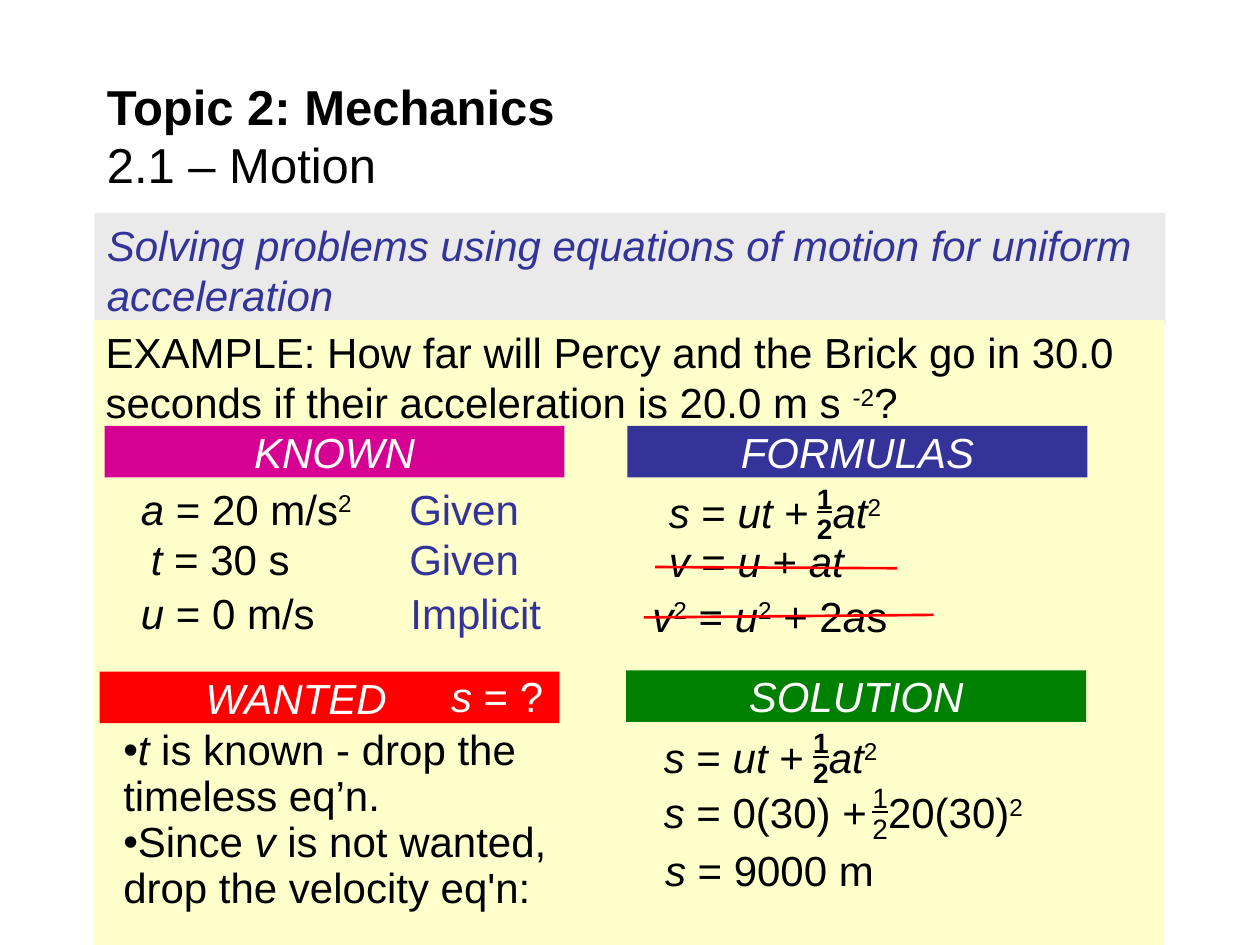
"""Build a physics slide that solves a uniform acceleration problem."""
from lxml import etree
from pptx import Presentation
from pptx.dml.color import RGBColor
from pptx.enum import shapes, text
from pptx.oxml.ns import qn
from pptx.util import Inches, Pt

THEME = {
    "font": "Arial", "title": 28, "body": 24, "fraction": 16,
    "black": "000000", "white": "FFFFFF", "blue": "333399", "grey": "EAEAEA",
    "cream": "FFFFCC", "magenta": "D60093", "red": "FF0000", "green": "008000",
}
ALIGN = {"l": text.PP_ALIGN.LEFT, "c": text.PP_ALIGN.CENTER, "r": text.PP_ALIGN.RIGHT}

TITLE = [[("Topic 2: Mechanics", "b")], [("2.1 – Motion", "")]]
TOPIC = [("Solving problems using equations of motion for uniform acceleration", "i")]
EXAMPLE = [
    ("EXAMPLE: How far will Percy and the Brick go in 30.0 seconds "
     "if their acceleration is 20.0 m s ", ""), ("-2", "^"), ("?", "")]

HEADERS = [
    ("KNOWN", 0.83, 3.38, "magenta", {"align": "c"}),
    ("FORMULAS", 4.98, 3.38, "blue", {"align": "c"}),
    ("WANTED", 0.79, 5.33, "red", {"inset": 0.84}),
    ("SOLUTION", 4.97, 5.32, "green", {"align": "c"}),
]
KNOWN = [
    (1.02, 3.83, [("a", "i"), (" = 20 m/s", ""), ("2", "^")], 3.15, "Given"),
    (1.1, 4.23, [("t", "i"), (" = 30 s", "")], 3.15, "Given"),
    (1.02, 4.66, [("u", "i"), (" = 0 m/s", "")], 3.16, "Implicit"),
]
WANTED = [("s", "i"), (" = ?", "")]
NOTES = [
    (5.74, [("t", "i"), (" is known - drop the timeless eq’n.", "")]),
    (6.47, [("Since ", ""), ("v", "i"),
            (" is not wanted, drop the velocity eq'n:", "")]),
]
DISPLACEMENT = [("s ", "i"), ("= ", ""), ("ut", "i"), (" +\t", ""), ("at", "i"), ("2", "^")]
SUBSTITUTED = [("s ", "i"), ("= 0(30) +\t20(30)", ""), ("2", "^")]
HALF_EQUATIONS = [
    (5.21, 3.86, DISPLACEMENT, 1.16, "b"),
    (5.17, 5.8, DISPLACEMENT, 1.17, "b"),
    (5.17, 6.24, SUBSTITUTED, 1.64, ""),
]
EQUATIONS = [
    (5.21, 4.25, [("v", "i"), (" = ", ""), ("u ", "i"), ("+ ", ""), ("at", "i")]),
    (5.08, 4.68, [("v", "i"), ("2", "^"), (" = ", ""), ("u", "i"), ("2", "^"),
                  (" + 2", ""), ("a", "i"), ("s", "")]),
    (5.18, 6.7, [("s", "i"), (" = 9000 m", "")]),
]
STRIKES = [(5.2, 4.5, 7.12, 4.51), (5.11, 4.9, 7.41, 4.88)]


def rgb(name):
    return RGBColor.from_string(THEME[name])


def add_text(slide, box, paragraphs, *, size="body", color="black", fill=None, align="l",
             anchor=text.MSO_ANCHOR.TOP, spacing=0.9, before=20, inset=0.1,
             tab=None, bullet=False):
    place = [Inches(v) for v in box]
    if fill:
        sp = slide.shapes.add_shape(shapes.MSO_SHAPE.RECTANGLE, *place)
        sp.shadow.inherit = False
        sp.fill.solid()
        sp.fill.fore_color.rgb = rgb(fill)
        sp.line.fill.background()
    else:
        sp = slide.shapes.add_textbox(*place)
    tf = sp.text_frame
    tf.word_wrap = True
    tf.vertical_anchor = anchor
    tf.margin_left = Inches(inset)
    for i, runs in enumerate(paragraphs):
        p = tf.add_paragraph() if i else tf.paragraphs[0]
        p.alignment = ALIGN[align]
        p.line_spacing = spacing
        ppr = p._p.get_or_add_pPr()
        if before:
            gap = etree.SubElement(ppr, qn("a:spcBef"))
            etree.SubElement(gap, qn("a:spcPct"), val=str(before * 1000))
        if bullet:
            ppr.set("marL", "0")
            ppr.set("indent", "0")
            etree.SubElement(ppr, qn("a:buFont"), typeface=THEME["font"])
            etree.SubElement(ppr, qn("a:buChar"), char="•")
        if tab:
            tabs = etree.SubElement(ppr, qn("a:tabLst"))
            etree.SubElement(tabs, qn("a:tab"), pos=str(Inches(tab)), algn="l")
        for content, style in runs:
            r = p.add_run()
            r.text = content
            r.font.name = THEME["font"]
            r.font.size = Pt(THEME[size])
            r.font.color.rgb = rgb(color)
            r.font.bold = "b" in style
            r.font.italic = "i" in style
            r.font.underline = "u" in style
            if "^" in style:
                r._r.get_or_add_rPr().set("baseline", "30000")


def add_strike(slide, x1, y1, x2, y2):
    line = slide.shapes.add_connector(
        shapes.MSO_CONNECTOR.STRAIGHT, *[Inches(v) for v in (x1, y1, x2, y2)])
    line.line.color.rgb = rgb("red")
    line.line.width = Pt(1.5)
    etree.SubElement(line._element.spPr, qn("a:effectLst"))


def main():
    prs = Presentation()
    prs.slide_width, prs.slide_height = Inches(10), Inches(7.5)
    slide = prs.slides.add_slide(prs.slide_layouts[6])

    add_text(slide, (0.75, 1.69, 8.5, 0.89), [TOPIC], color="blue", fill="grey", spacing=1)
    add_text(slide, (0.75, 0.58, 8.5, 0.98), TITLE, size="title", spacing=1, before=0,
             anchor=text.MSO_ANCHOR.MIDDLE)
    add_text(slide, (0.74, 2.54, 8.5, 4.96), [EXAMPLE], fill="cream", spacing=1)

    for label, x, y, fill, layout in HEADERS:
        add_text(slide, (x, y, 3.65, 0.41), [[(label, "i")]], color="white", fill=fill,
                 **layout)
    add_text(slide, (3.22, 5.32, 1.19, 0.41), [WANTED], color="white", align="r")

    for x, y, runs, reason_x, reason in KNOWN:
        add_text(slide, (x, y, 2.1, 0.41), [runs])
        add_text(slide, (reason_x, y, 1.8, 0.41), [[(reason, "")]], color="blue")
    for y, runs in NOTES:
        add_text(slide, (0.88, y, 3.95, 0.85), [runs], bullet=True)

    for x, y, runs, offset, weight in HALF_EQUATIONS:
        add_text(slide, (x, y, 3.44, 0.35), [runs], tab=offset + 0.14)
        add_text(slide, (x + offset, y - 0.06, 0.35, 0.46),
                 [[("1", weight + "u")], [("2", weight)]],
                 size="fraction", align="c", before=0)
    for x, y, runs in EQUATIONS:
        add_text(slide, (x, y, 3.2, 0.4), [runs])
    for ends in STRIKES:
        add_strike(slide, *ends)

    prs.save("out.pptx")


if __name__ == "__main__":
    main()
